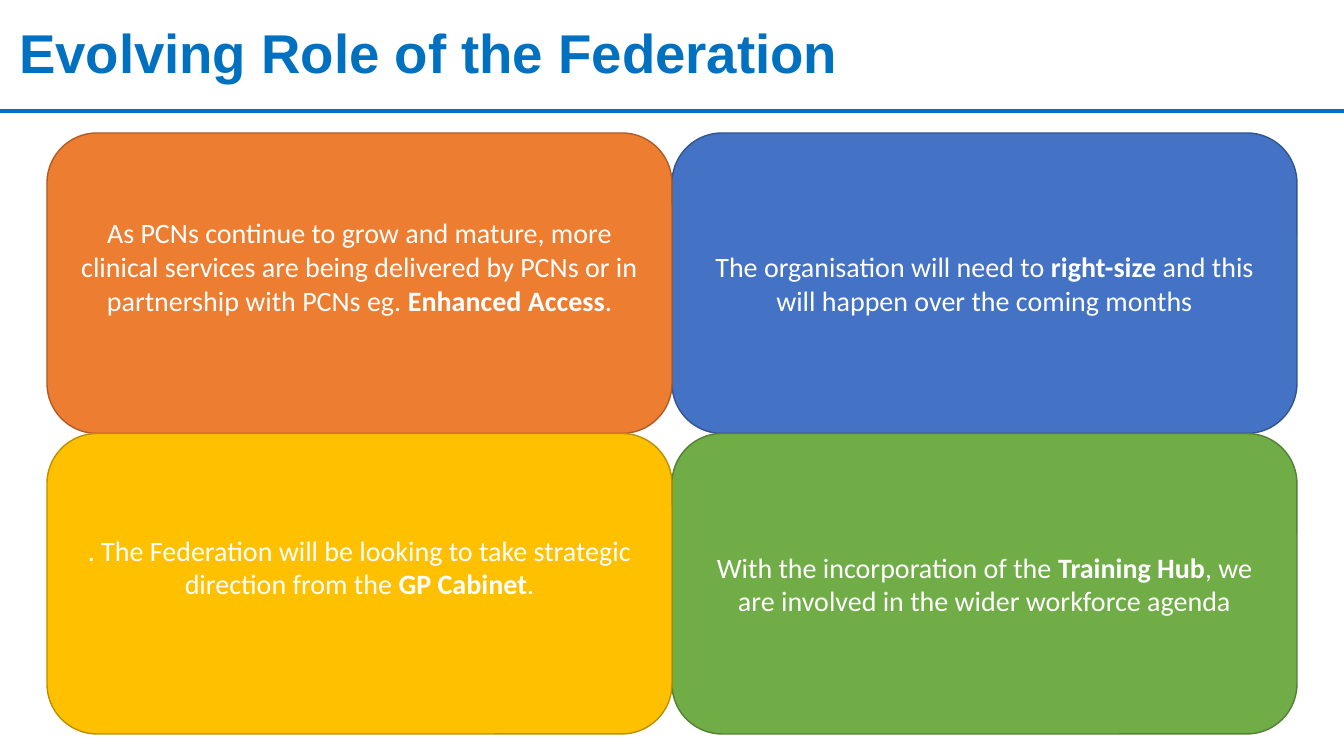
from lxml import etree
from pptx import Presentation
from pptx.dml.color import RGBColor
from pptx.enum.shapes import MSO_CONNECTOR, MSO_SHAPE
from pptx.enum.text import MSO_ANCHOR, PP_ALIGN
from pptx.oxml.ns import qn
from pptx.util import Pt

STRAIGHT = MSO_CONNECTOR.STRAIGHT
ROUNDED = MSO_SHAPE.ROUNDED_RECTANGLE
MIDDLE = MSO_ANCHOR.MIDDLE
LEFT, CENTER = PP_ALIGN.LEFT, PP_ALIGN.CENTER

SCALE = 914400 / 100.8
WIDTH, HEIGHT = 1344, 756
INSET_X, INSET_Y = 10, 5
LINE_HEIGHT = 34
COLORS = {
    "title": "0070C0", "text": "FFFFFF",
    "blue": "4472C4", "blue_line": "325491",
    "orange": "ED7D31", "orange_line": "AF5C24",
    "green": "70AD47", "green_line": "538035",
    "yellow": "FFC000", "yellow_line": "BD8E00",
}

# column, row, colour, text before / bold / after, lines of lift
CARDS = [
    (1, 0, "blue", ["The organisation will need to ", "right-size",
                    " and this will happen over the coming months"], 0),
    (0, 0, "orange", ["As PCNs continue to grow and mature, more clinical services are being "
                      "delivered by PCNs or in partnership with PCNs eg. ",
                      "Enhanced Access", "."], 1),
    (1, 1, "green", ["With the incorporation of the ", "Training Hub",
                     ", we are involved in the wider workforce agenda"], 0),
    (0, 1, "yellow", [". The Federation will be looking to take strategic direction from the ",
                      "GP Cabinet", "."], 1),
]


def px(n):
    """Turn pixels into EMU."""
    return round(n * SCALE)


def rgb(name):
    """Look up a named colour."""
    return RGBColor.from_string(COLORS[name])


def write(s, runs, size, font, color, align=LEFT, spacing=1.0, lift=0):
    """Fill a shape with one paragraph of (text, bold) runs."""
    tf = s.text_frame
    tf.word_wrap = True
    tf.vertical_anchor = MIDDLE
    tf.margin_left = tf.margin_right = px(INSET_X)
    tf.margin_top = px(INSET_Y)
    tf.margin_bottom = px(INSET_Y + lift)
    p = tf.paragraphs[0]
    p.alignment = align
    p.line_spacing = spacing
    for text, bold in runs:
        r = p.add_run()
        r.text = text
        r.font.size = Pt(size)
        r.font.name = font
        r.font.bold = bold
        r.font.color.rgb = rgb(color)


def add_header(slide, x, y, w, h):
    """Place the title above a full-width rule."""
    rule = slide.shapes.add_connector(STRAIGHT, px(x), px(y + h), px(x + w), px(y + h))
    rule.line.color.rgb = rgb("title")
    rule.line.width = Pt(2.25)
    etree.SubElement(rule._element.spPr, qn("a:effectLst"))
    title = slide.shapes.add_textbox(px(x + 9), px(y), px(1044), px(h))
    write(title, [("Evolving Role of the Federation", True)], 39, "Arial", "title", spacing=0.9)


def add_card(slide, x, y, w, h, color, parts, lift):
    """Place one rounded card whose middle part is bold."""
    s = slide.shapes.add_shape(ROUNDED, px(x), px(y), px(w), px(h))
    s.shadow.inherit = False
    s.fill.solid()
    s.fill.fore_color.rgb = rgb(color)
    s.line.color.rgb = rgb(color + "_line")
    s.line.width = Pt(1)
    runs = [(text, i == 1) for i, text in enumerate(parts)]
    write(s, runs, 20, "Calibri", "text", CENTER, lift=lift * LINE_HEIGHT)


def add_cards(slide, x, y, w, h):
    """Place the cards in a two by two grid."""
    card_w, card_h = w / 2, h / 2
    for col, row, color, parts, lift in CARDS:
        add_card(slide, x + col * card_w, y + row * card_h, card_w, card_h, color, parts, lift)


def main():
    """Build and save the slide."""
    prs = Presentation()
    prs.slide_width, prs.slide_height = px(WIDTH), px(HEIGHT)
    slide = prs.slides.add_slide(prs.slide_layouts[6])
    add_header(slide, 0, 0, WIDTH, 111)
    add_cards(slide, 47, 133, 1250, 601)
    prs.save("out.pptx")


if __name__ == "__main__":
    main()
